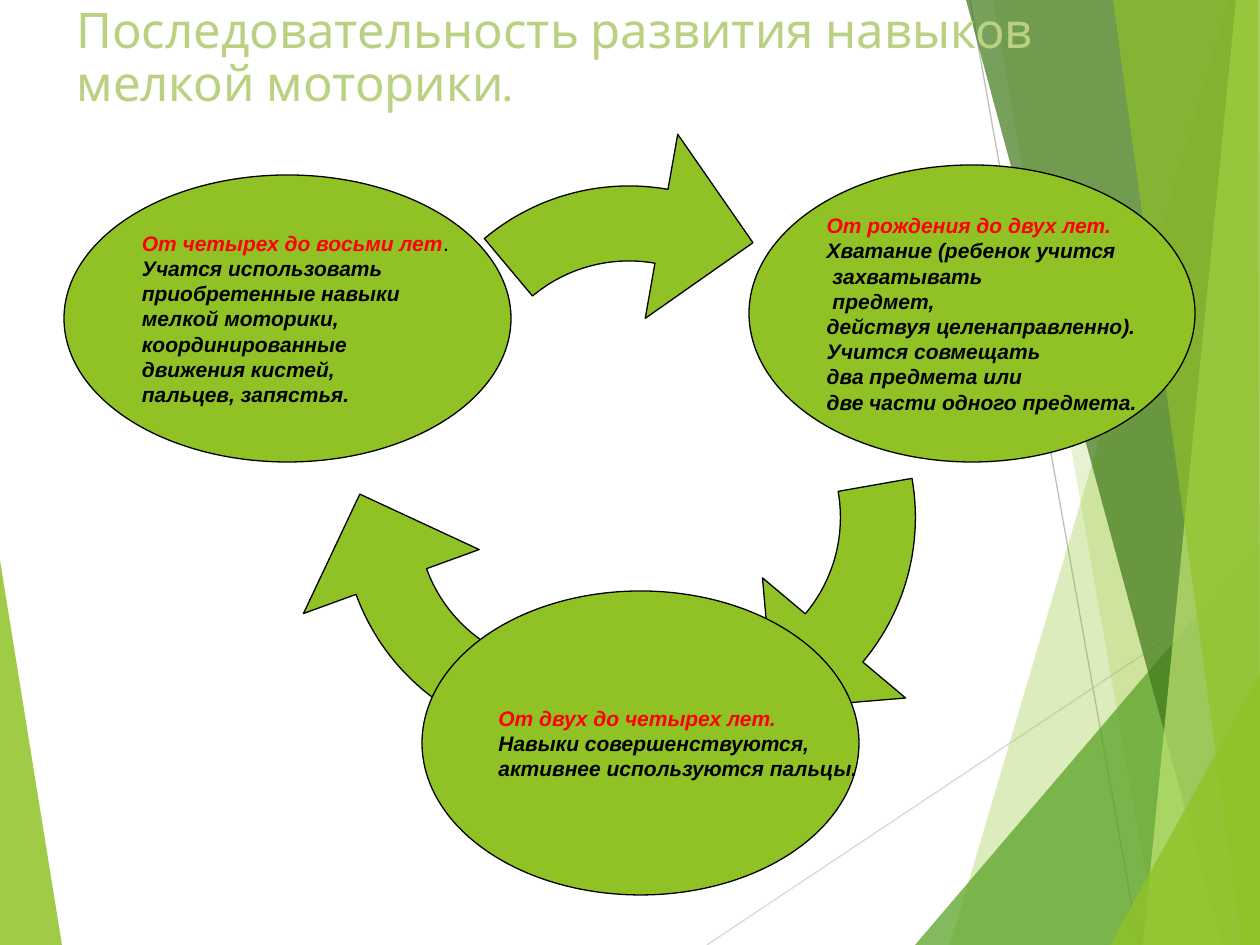
"""Build a slide showing the cycle of fine motor skill development."""
from dataclasses import dataclass
from math import cos, radians, sin

from lxml.etree import SubElement
from pptx import Presentation
from pptx.dml.color import RGBColor
from pptx.enum.shapes import MSO_CONNECTOR, MSO_SHAPE
from pptx.enum.text import MSO_ANCHOR, MSO_AUTO_SIZE, PP_ALIGN
from pptx.oxml.ns import qn
from pptx.util import Inches, Pt

PX = 7257


@dataclass(frozen=True)
class Theme:
    green: str = "90C226"
    forest: str = "54A021"
    dark: str = "3F7819"
    lime: str = "C0E474"
    title: str = "B9D181"
    heading: str = "FF0000"
    ink: str = "000000"
    title_font: str = "Karla"
    body_font: str = "Arial"
    title_size: int = 28
    body_size: int = 12
    line_width: float = 0.75


theme = Theme()


def add_span(para, text, font=theme.body_font, size=theme.body_size,
             color=theme.ink, strong=True):
    span = para.add_run()
    span.text = text
    span.font.name = font
    span.font.size = Pt(size)
    span.font.color.rgb = RGBColor.from_string(color)
    span.font.bold = span.font.italic = strong


def add_outline(page, points, color):
    corners = [(round(x * PX), round(y * PX)) for x, y in points]
    builder = page.shapes.build_freeform(*corners[0], scale=1.0)
    builder.add_line_segments(corners[1:], close=True)
    shape = builder.convert_to_shape()
    shape.shadow.inherit = False
    shape.fill.solid()
    shape.fill.fore_color.rgb = RGBColor.from_string(color)
    return shape


deck = Presentation()
deck.slide_width, deck.slide_height = Inches(10), Inches(7.5)
page = deck.slides.add_slide(deck.slide_layouts[5])

rays = [((707, 945), (1261, 576), "D9D9D9"), ((970, 0), (1139, 945), "BFBFBF")]
for start, end, color in rays:
    ray = page.shapes.add_connector(
        MSO_CONNECTOR.STRAIGHT, *[value * PX for value in start + end])
    ray.line.color.rgb = RGBColor.from_string(color)
    ray.line.width = Pt(theme.line_width)
    SubElement(ray.element.spPr, qn("a:effectLst"))

facets = [
    ([(0, 560), (62, 945), (0, 945)], theme.green, 85),
    ([(1229, 0), (950, 945), (1260, 945), (1260, 0)], theme.green, 30),
    ([(993, 0), (1158, 945), (1260, 945), (1260, 0)], theme.green, 20),
    ([(915, 945), (1260, 541), (1260, 945)], theme.forest, 72),
    ([(966, 0), (1222, 945), (1260, 945), (1260, 0)], theme.dark, 70),
    ([(1236, 0), (1143, 945), (1260, 945), (1260, 0)], theme.lime, 70),
    ([(1113, 0), (1242, 945), (1260, 945), (1258, 0)], theme.green, 65),
    ([(1110, 945), (1260, 674), (1260, 945)], theme.green, 80),
]
for points, color, opacity in facets:
    facet = add_outline(page, points, color)
    facet.line.fill.background()
    fill_color = facet.element.spPr.find(qn("a:solidFill"))[0]
    SubElement(fill_color, qn("a:alpha"), val=str(opacity * 1000))

title = page.shapes.title
page.shapes.element.append(title.element)
title.left, title.top, title.width, title.height = (
    value * PX for value in (64, 0, 1134, 157))
frame = title.text_frame
frame.word_wrap = True
frame.auto_size = MSO_AUTO_SIZE.NONE
frame.vertical_anchor = MSO_ANCHOR.TOP
para = frame.paragraphs[0]
para.alignment = PP_ALIGN.LEFT
para.line_spacing = 0.9
add_span(para, "Последовательность развития навыков мелкой моторики.",
         font=theme.title_font, size=theme.title_size, color=theme.title,
         strong=False)

hub_x, hub_y, hub_offset = 629, 482, 71
inner, outer = 150, 225
arc = range(-130, -79, 2)
arrow = [(outer, angle) for angle in arc]
arrow += [(281, -80), (209, -53.6), (94, -80)]
arrow += [(inner, angle) for angle in reversed(arc)]
for turn in (0, 120, 240):
    center_x = hub_x + hub_offset * cos(radians(turn - 90))
    center_y = hub_y + hub_offset * sin(radians(turn - 90))
    points = [(center_x + radius * cos(radians(angle + turn)),
               center_y + radius * sin(radians(angle + turn)))
              for radius, angle in arrow]
    shape = add_outline(page, points, theme.green)
    shape.line.color.rgb = RGBColor.from_string(theme.ink)
    shape.line.width = Pt(theme.line_width)

stages = [
    ((64, 175, 447, 287), "От четырех до восьми лет", ".", [
        "Учатся использовать", "приобретенные навыки", "мелкой моторики,",
        "координированные", "движения кистей,", "пальцев, запястья."]),
    ((749, 165, 446, 297), "От рождения до двух лет.", "", [
        "Хватание (ребенок учится", " захватывать", " предмет,",
        "действуя целенаправленно).", "Учится совмещать",
        "два предмета или", "две части одного предмета."]),
    ((422, 591, 437, 304), "От двух до четырех лет.", "", [
        "Навыки совершенствуются,", "активнее используются пальцы."]),
]
for bounds, heading, ending, lines in stages:
    oval = page.shapes.add_shape(
        MSO_SHAPE.OVAL, *[value * PX for value in bounds])
    oval.shadow.inherit = False
    oval.fill.solid()
    oval.fill.fore_color.rgb = RGBColor.from_string(theme.green)
    oval.line.color.rgb = RGBColor.from_string(theme.ink)
    oval.line.width = Pt(theme.line_width)
    frame = oval.text_frame
    frame.word_wrap = False
    frame.vertical_anchor = MSO_ANCHOR.MIDDLE
    para = frame.paragraphs[0]
    para.alignment = PP_ALIGN.LEFT
    add_span(para, heading, color=theme.heading)
    if ending:
        add_span(para, ending, strong=False)
    for line in lines:
        para = frame.add_paragraph()
        para.alignment = PP_ALIGN.LEFT
        add_span(para, line)

deck.save("out.pptx")
